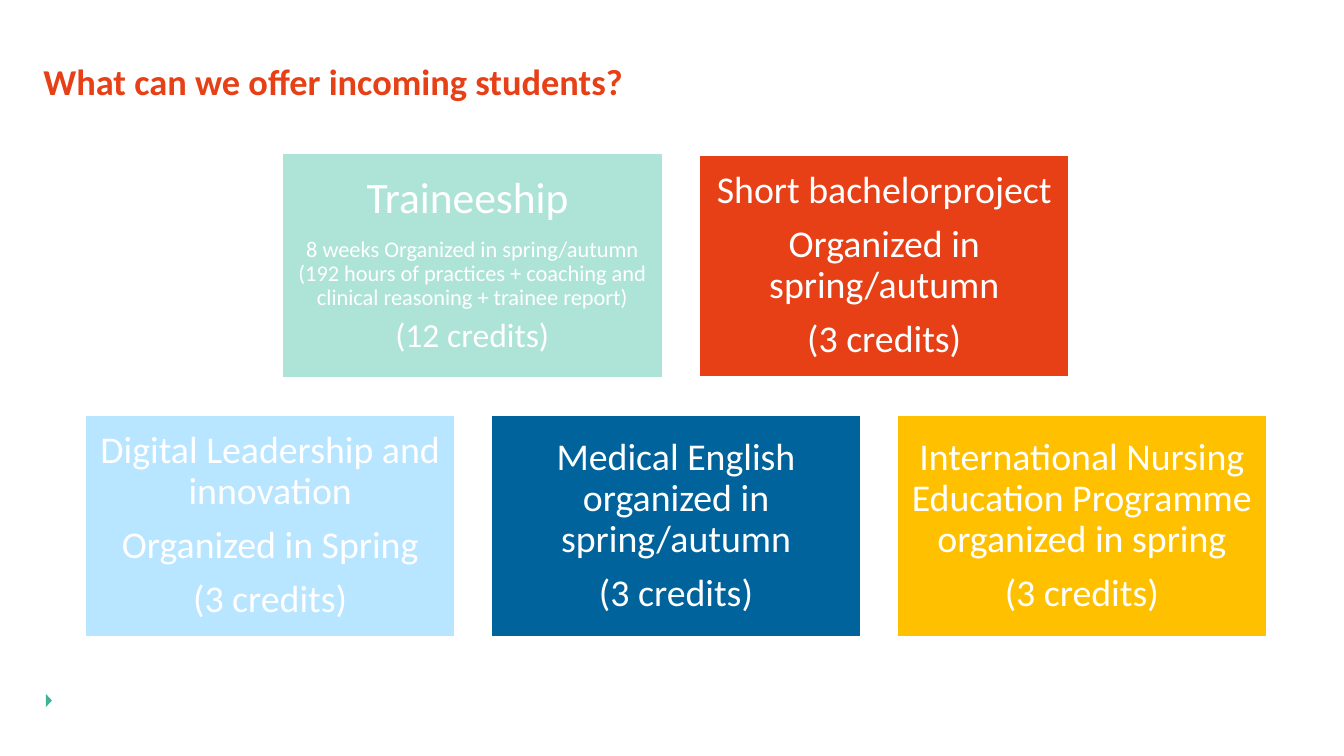
from pptx import Presentation
from pptx.dml.color import RGBColor
from pptx.enum import shapes, text
from pptx.util import Inches, Pt

FONT = "Calibri"
COLORS = {
    "white": "FFFFFF",
    "red": "E73F16",
    "mint": "AEE4D7",
    "sky": "B8E5FF",
    "blue": "00639C",
    "gold": "FFC000",
    "green": "3CB497",
}
WIDTH, HEIGHT, STEP = 3.66, 2.2, 4.025
LEFT, TOP, LOW = 0.85, 1.54, 4.12
CREDITS = "(3 credits)"
COURSES = [
    ("sky", ["Digital Leadership and innovation", "Organized in Spring", CREDITS]),
    ("blue", ["Medical English organized in spring/autumn", CREDITS]),
    ("gold", ["International Nursing Education Programme organized in spring", CREDITS]),
]


def color(name):
    return RGBColor.from_string(COLORS[name])


def inset(frame, size):
    frame.word_wrap = True
    frame.margin_left = frame.margin_right = Inches(size)
    frame.margin_top = frame.margin_bottom = Inches(size)


def style(para, size, tint, bold=False):
    for run in para.runs:
        run.font.name = FONT
        run.font.size = Pt(size)
        run.font.bold = bold
        run.font.color.rgb = color(tint)


def add_title(slide, words):
    box = slide.shapes.add_textbox(Inches(0.43), Inches(0.67), Inches(11.5), Inches(0.75))
    inset(box.text_frame, 0)
    para = box.text_frame.paragraphs[0]
    para.text = words
    para.line_spacing = 0.8
    style(para, 26, "red", True)


def add_shape(slide, kind, place, fill):
    shape = slide.shapes.add_shape(kind, *[Inches(v) for v in place])
    shape.shadow.inherit = False
    shape.fill.solid()
    shape.fill.fore_color.rgb = color(fill)
    return shape


def add_card(slide, place, fill, lines, sizes=(27, 27, 27), pad=0.11):
    card = add_shape(slide, shapes.MSO_SHAPE.RECTANGLE, place, fill)
    card.line.color.rgb = color("white")
    card.line.width = Pt(1)
    frame = card.text_frame
    inset(frame, pad)
    frame.vertical_anchor = text.MSO_ANCHOR.MIDDLE
    frame.text = "\n".join(lines)
    for para, size in zip(frame.paragraphs, sizes):
        para.alignment = text.PP_ALIGN.CENTER
        para.line_spacing = 0.9
        para.space_after = Pt(round(0.35 * size, 1))
        style(para, size, "white")


def add_marker(slide):
    mark = add_shape(slide, shapes.MSO_SHAPE.ISOSCELES_TRIANGLE, (0.42, 6.92, 0.13, 0.06), "green")
    mark.line.fill.background()
    mark.rotation = 90


def main():
    deck = Presentation()
    deck.slide_width, deck.slide_height = Inches(13.33), Inches(7.5)
    slide = deck.slides.add_slide(deck.slide_layouts[6])
    add_marker(slide)
    add_title(slide, "What can we offer incoming students?")
    trainee = [
        "Traineeship ",
        "8 weeks Organized in spring/autumn (192 hours of practices + coaching and "
        "clinical reasoning + trainee report)",
        "(12 credits)",
    ]
    add_card(slide, (2.8, 1.52, 3.77, 2.23), "mint", trainee, (31, 16, 24), 0.13)
    project = ["Short bachelorproject", "Organized in spring/autumn", CREDITS]
    add_card(slide, (6.94, TOP, WIDTH, HEIGHT), "red", project)
    for i, (fill, lines) in enumerate(COURSES):
        add_card(slide, (LEFT + i * STEP, LOW, WIDTH, HEIGHT), fill, lines)
    deck.save("out.pptx")


if __name__ == "__main__":
    main()
